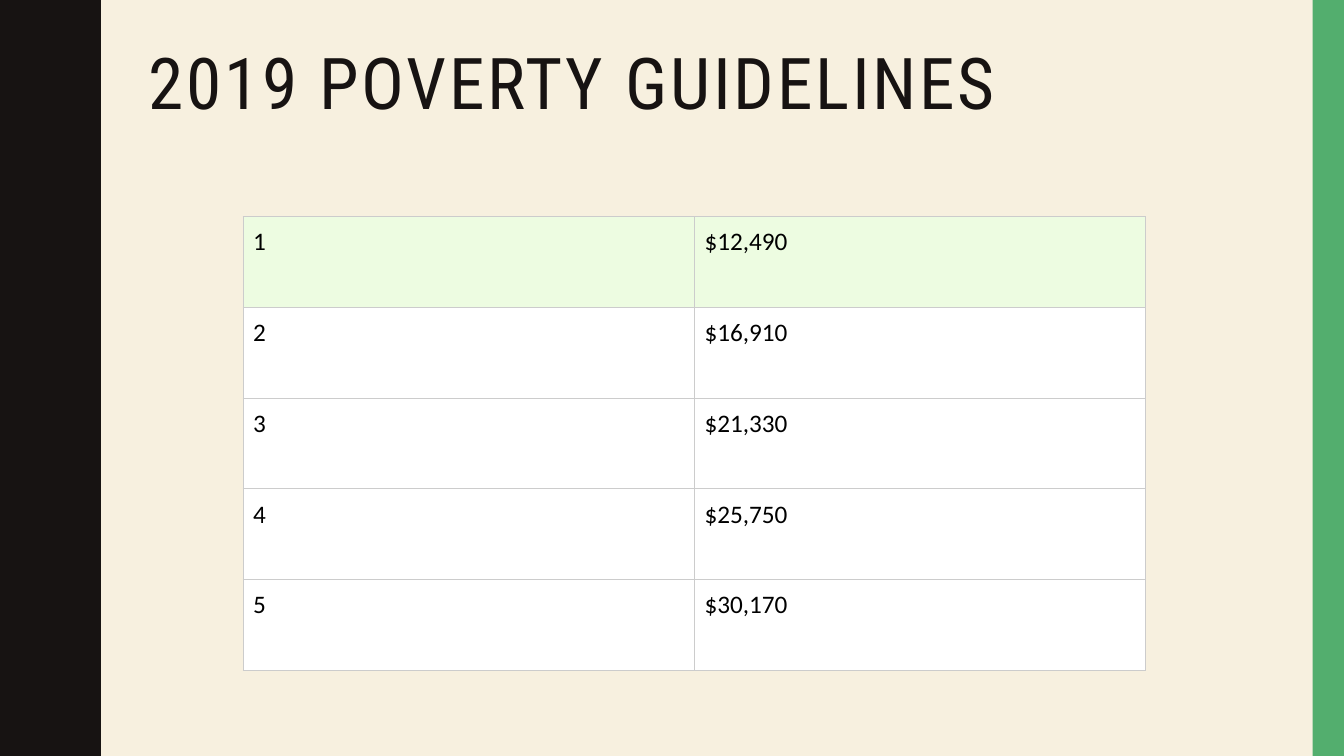
import pptx
import pptx.util
import pptx.dml.color
import pptx.enum.shapes
import pptx.enum.text
import pptx.oxml
import pptx.oxml.ns

THEME = {
    "background": "F7F0DF",
    "dark": "171312",
    "accent": "53AE6E",
    "highlight": "EDFCE1",
    "plain": "FFFFFF",
    "border": "CCCCCC",
    "table_text": "000000",
    "title_font": "Roboto Condensed",
    "table_font": "Calibri",
    "title_size": 51,
    "table_size": 18,
    "title_spacing": 2,
    "border_width": 0.75,
}

presentation = pptx.Presentation()
presentation.slide_width = pptx.util.Inches(13.33)
presentation.slide_height = pptx.util.Inches(7.5)
slide = presentation.slides.add_slide(presentation.slide_layouts[5])


def color(name):
    return pptx.dml.color.RGBColor.from_string(THEME[name])


def place(left, top, width, height):
    across = presentation.slide_width / 100
    down = presentation.slide_height / 100
    return [round(share * unit) for share, unit in zip((left, top, width, height), (across, down, across, down))]


slide.background.fill.solid()
slide.background.fill.fore_color.rgb = color("background")

wave_count = 5
wave_height = 1.5
trough, crest = 0.78, 0.97
quarter = [(0.78, 0), (0.78, 0.07), (0.79, 0.14), (0.8, 0.2), (0.81, 0.25), (0.83, 0.29), (0.85, 0.33)]
half = quarter + [(trough + crest - x, wave_height / 2 - y) for x, y in reversed(quarter)]
wave = half + [(x, wave_height - y) for x, y in reversed(half)]
edge = [(x, y + index * wave_height) for index in range(wave_count) for x, y in wave]
builder = slide.shapes.build_freeform(0, 0, scale=pptx.util.Inches(1))
builder.add_line_segments(edge + [(0, wave_count * wave_height)], close=True)
wavy_band = builder.convert_to_shape()
side_strip = slide.shapes.add_shape(pptx.enum.shapes.MSO_SHAPE.RECTANGLE, *place(97.67, 0, 2.33, 100))
for shape, fill_name in ((wavy_band, "dark"), (side_strip, "accent")):
    shape.shadow.inherit = False
    shape.fill.solid()
    shape.fill.fore_color.rgb = color(fill_name)
    shape.line.fill.background()

title = slide.shapes.title
title.left, title.top, title.width, title.height = place(10.28, 5.6, 83.5, 21.73)
title_frame = title.text_frame
title_frame.text = "2019 POVERTY GUIDELINES"
frame_format = {
    "word_wrap": True,
    "auto_size": pptx.enum.text.MSO_AUTO_SIZE.NONE,
    "vertical_anchor": pptx.enum.text.MSO_ANCHOR.TOP,
}
for name, value in frame_format.items():
    setattr(title_frame, name, value)
title_paragraph = title_frame.paragraphs[0]
title_paragraph.alignment = pptx.enum.text.PP_ALIGN.LEFT
title_paragraph.line_spacing = 0.9
title_run = title_paragraph.runs[0]
title_format = {"name": THEME["title_font"], "size": pptx.util.Pt(THEME["title_size"])}
for name, value in title_format.items():
    setattr(title_run.font, name, value)
title_run.font.color.rgb = color("dark")
title_run.font._element.set("spc", str(THEME["title_spacing"] * 100))

guidelines = [("1", "$12,490"), ("2", "$16,910"), ("3", "$21,330"), ("4", "$25,750"), ("5", "$30,170")]
table = slide.shapes.add_table(len(guidelines), 2, *place(18.08, 28.67, 67.18, 60)).table
table.first_row = False
table.horz_banding = False
cell_format = dict.fromkeys(
    ("margin_left", "margin_right", "margin_top", "margin_bottom"), pptx.util.Inches(0.1)
)
text_format = {"name": THEME["table_font"], "size": pptx.util.Pt(THEME["table_size"])}
border_width = pptx.util.Pt(THEME["border_width"])
for row_index, row_values in enumerate(guidelines):
    for column_index, text in enumerate(row_values):
        cell = table.cell(row_index, column_index)
        cell.text = text
        for name, value in cell_format.items():
            setattr(cell, name, value)
        font = cell.text_frame.paragraphs[0].runs[0].font
        for name, value in text_format.items():
            setattr(font, name, value)
        font.color.rgb = color("table_text")
        properties = cell._tc.get_or_add_tcPr()
        for side in ("lnL", "lnR", "lnT", "lnB"):
            properties.append(pptx.oxml.parse_xml(
                f'<a:{side} {pptx.oxml.ns.nsdecls("a")} w="{border_width}"><a:solidFill>'
                f'<a:srgbClr val="{THEME["border"]}"/></a:solidFill></a:{side}>'
            ))
        cell.fill.solid()
        cell.fill.fore_color.rgb = color("plain" if row_index else "highlight")

presentation.save("out.pptx")
